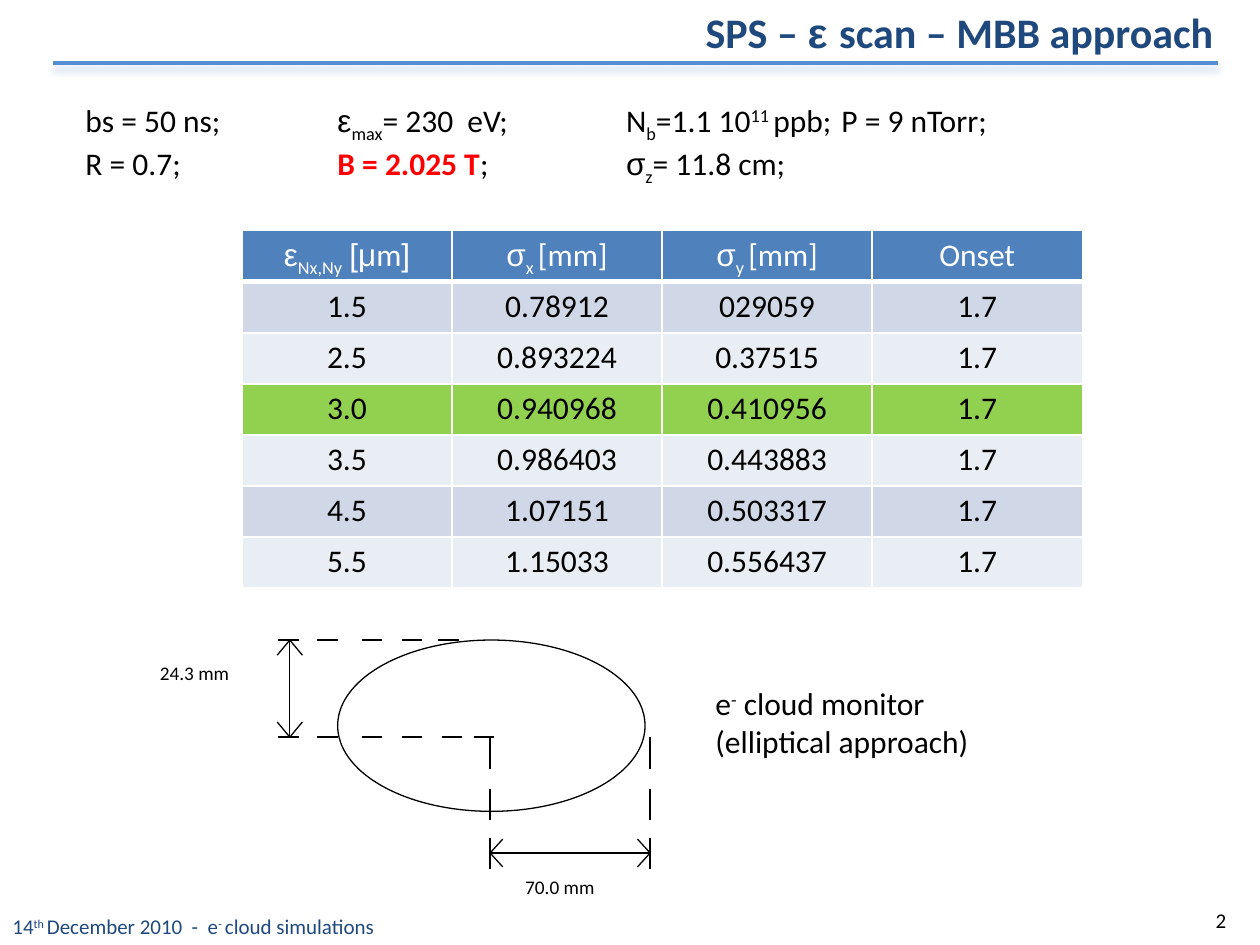
from lxml.etree import SubElement
from pptx import Presentation
from pptx.dml.color import RGBColor
from pptx.enum.shapes import MSO_CONNECTOR as Link, MSO_SHAPE as Preset
from pptx.enum.text import MSO_ANCHOR as Anchor, MSO_AUTO_SIZE as Fit, PP_ALIGN as Align
from pptx.oxml.ns import qn
from pptx.util import Inches, Pt

COLS, ROWS = 100, 75
BLACK, WHITE, NAVY, RED = "000000", "FFFFFF", "1F497D", "FF0000"
HEADER, BAND, PALE, GREEN = "4F81BD", "D0D8E8", "E9EDF4", "92D050"
RULE, GLOW = "558ED5", "95B3D7"
GREEK = {"name": "Arial"}
SUB, SUP = {"baseline": -25}, {"baseline": 30}


def rgb(value):
    return RGBColor.from_string(value)


def assign(target, values):
    for key, value in values.items():
        setattr(target, key, value)


def solid(parent, color):
    fill = SubElement(parent, qn("a:solidFill"))
    return SubElement(fill, qn("a:srgbClr"), val=color)


class Board:
    def __init__(self, deck):
        self.slide = deck.slides.add_slide(deck.slide_layouts[5])
        self.shapes = self.slide.shapes
        self.col = deck.slide_width / COLS
        self.row = deck.slide_height / ROWS
        self.font = {"name": "Calibri", "bold": False}

    def place(self, left, top, width, height):
        return [round(n * unit) for n, unit in
                zip((left, top, width, height), (self.col, self.row) * 2)]

    def add_runs(self, paragraph, runs, size, color, **style):
        assign(paragraph, style)
        for text, extra in runs:
            run = paragraph.add_run()
            run.text = text
            values = {**self.font, "size": Pt(size), **extra}
            run.font.color.rgb = rgb(values.pop("color", color))
            baseline = values.pop("baseline", 0)
            if baseline:
                run._r.get_or_add_rPr().set("baseline", str(baseline * 1000))
            assign(run.font, values)

    def title(self, area, runs, size, color):
        title = self.slide.shapes.title
        assign(title, dict(zip(("left", "top", "width", "height"), self.place(*area))))
        assign(title.text_frame, {"auto_size": Fit.NONE, "vertical_anchor": Anchor.TOP})
        self.add_runs(title.text_frame.paragraphs[0], runs, size, color, alignment=Align.LEFT)

    def text(self, area, lines, size, color=BLACK, anchor=Anchor.TOP, tabs=(), **style):
        frame = self.shapes.add_textbox(*self.place(*area)).text_frame
        assign(frame, {"word_wrap": True, "vertical_anchor": anchor})
        for index, runs in enumerate(lines):
            paragraph = frame.add_paragraph() if index else frame.paragraphs[0]
            self.add_runs(paragraph, runs, size, color, **style)
            if tabs:
                stops = SubElement(paragraph._p.get_or_add_pPr(), qn("a:tabLst"))
                for stop in tabs:
                    SubElement(stops, qn("a:tab"), pos=str(round(stop * self.col)), algn="l")

    def line(self, start, end, color=BLACK, width=0.75, glow=None):
        begin_x, begin_y, end_x, end_y = self.place(*start, *end)
        line = self.shapes.add_connector(Link.STRAIGHT, begin_x, begin_y, end_x, end_y)
        line.line.color.rgb = rgb(color)
        line.line.width = Pt(width)
        effects = SubElement(line._element.spPr, qn("a:effectLst"))
        if glow:
            shadow = SubElement(effects, qn("a:outerShdw"), blurRad=str(Pt(4)),
                                dist=str(Pt(3)), dir="5400000", rotWithShape="0")
            tint = SubElement(shadow, qn("a:srgbClr"), val=glow)
            SubElement(tint, qn("a:alpha"), val="40000")

    def ellipse(self, area):
        ellipse = self.shapes.add_shape(Preset.OVAL, *self.place(*area))
        ellipse.shadow.inherit = False
        ellipse.fill.solid()
        ellipse.fill.fore_color.rgb = rgb(WHITE)
        ellipse.line.color.rgb = rgb(BLACK)
        ellipse.line.width = Pt(0.75)

    def table(self, area, rows, fills):
        table = self.shapes.add_table(len(rows), len(rows[0]), *self.place(*area)).table
        for r, (values, fill) in enumerate(zip(rows, fills)):
            for c, runs in enumerate(values):
                cell = table.cell(r, c)
                assign(cell, {"margin_left": Inches(0.07), "margin_right": Inches(0.07),
                              "margin_top": 0, "margin_bottom": 0})
                self.add_runs(cell.text_frame.paragraphs[0], runs, 18, BLACK if r else WHITE,
                              alignment=Align.CENTER, line_spacing=1.15)
                for side in "LRTB":
                    thick = (r, side) in ((0, "B"), (1, "T"))
                    border = SubElement(cell._tc.get_or_add_tcPr(), qn("a:ln" + side),
                                        w=str(Pt(3 if thick else 1)))
                    solid(border, WHITE)
                cell.fill.solid()
                cell.fill.fore_color.rgb = rgb(fill)


def draw_monitor(board):
    board.shapes = board.slide.shapes.add_group_shape().shapes
    top, middle, center, edge = 50.8, 58.5, 38.9, 51.6
    height_x, width_y = 23, 67.7
    board.ellipse((26.8, top, 24.4, 13.6))
    board.line((height_x, top), (height_x, middle))
    board.line((center, width_y), (edge, width_y))
    for y, dashes in ((top, (22.1, 25.2, 28.7, 31.9, 34.8)),
                      (middle, (22.1, 25.2, 28.7, 31.9, 35.1, 37.6))):
        for x in dashes:
            board.line((x, y), (x + 1.6, y))
    for x in (center, edge):
        for y in (middle, 62.6, 66.5):
            board.line((x, y), (x, y + 2.5))
    for arm in (-1, 1):
        for y, inward in ((top, 1.2), (middle, -1.2)):
            board.line((height_x, y), (height_x + arm, y + inward))
        for x, inward in ((center, 1), (edge, -1)):
            board.line((x, width_y), (x + inward, width_y + 1.1 * arm))
    for label, x, y in (("24.3 mm", 11.7, 52), ("70.0 mm", 40.7, 69)):
        board.text((x, y, 10.5, 4.3), [[(label, {})]], 11, space_after=Pt(10))
    board.shapes = board.slide.shapes


def main():
    deck = Presentation()
    deck.slide_width, deck.slide_height = Inches(10), Inches(7.5)
    board = Board(deck)
    bold = {"bold": True}
    board.title((55, 0, 45, 5), [("SPS – ", bold), ("ε ", {**bold, **GREEK}),
                                 ("scan – MBB approach", bold)], 24, NAVY)
    board.line((4.2, 5), (96.7, 5), RULE, 2.75, GLOW)
    board.text((75, 71, 23.3, 4), [[("2", {})]], 12, anchor=Anchor.MIDDLE,
               alignment=Align.RIGHT)

    beam = [("bs = 50 ns; \t", {}), ("ε", GREEK), ("max", SUB), ("= 230  eV; \tN", {}),
            ("b", SUB), ("=1.1 10", {}), ("11 ", SUP), ("ppb; \tP = 9 nTorr;", {})]
    field = [("R = 0.7;\t", {}), ("B = 2.025 T", {"color": RED, **bold}), (";\t", {}),
             ("σ", GREEK), ("z", SUB), ("= 11.8 cm;", {})]
    board.text((5.8, 7.5, 90.8, 10.1), [beam, field], 18, tabs=(20, 42.9, 60))

    header = [[("ε", GREEK), ("Nx,Ny", SUB), (" ", {}), ("[μ", GREEK), ("m", {}), ("]", GREEK)],
              [("σ", GREEK), ("x ", SUB), ("[mm]", {})],
              [("σ", GREEK), ("y ", SUB), ("[mm]", {})],
              [("Onset", {})]]
    scan = [("1.5", "0.78912", "029059"), ("2.5", "0.893224", "0.37515"),
            ("3.0", "0.940968", "0.410956"), ("3.5", "0.986403", "0.443883"),
            ("4.5", "1.07151", "0.503317"), ("5.5", "1.15033", "0.556437")]
    body = [[[(value, {})] for value in (*values, "1.7")] for values in scan]
    board.table((19.2, 18.3, 66.7, 28.4), [header, *body],
                [HEADER, BAND, PALE, GREEN, PALE, BAND, PALE])

    draw_monitor(board)
    board.text((55.8, 53.8, 27.5, 7.1),
               [[("e", {}), ("-", SUP), (" cloud monitor (elliptical approach)", {})]], 18)
    board.text((0, 72, 94.2, 3), [[("14", {}), ("th ", SUP), ("December 2010  -  e", {}),
                                   ("- ", SUP), ("cloud simulations", {})]], 12, NAVY)
    deck.save("out.pptx")


if __name__ == "__main__":
    main()
